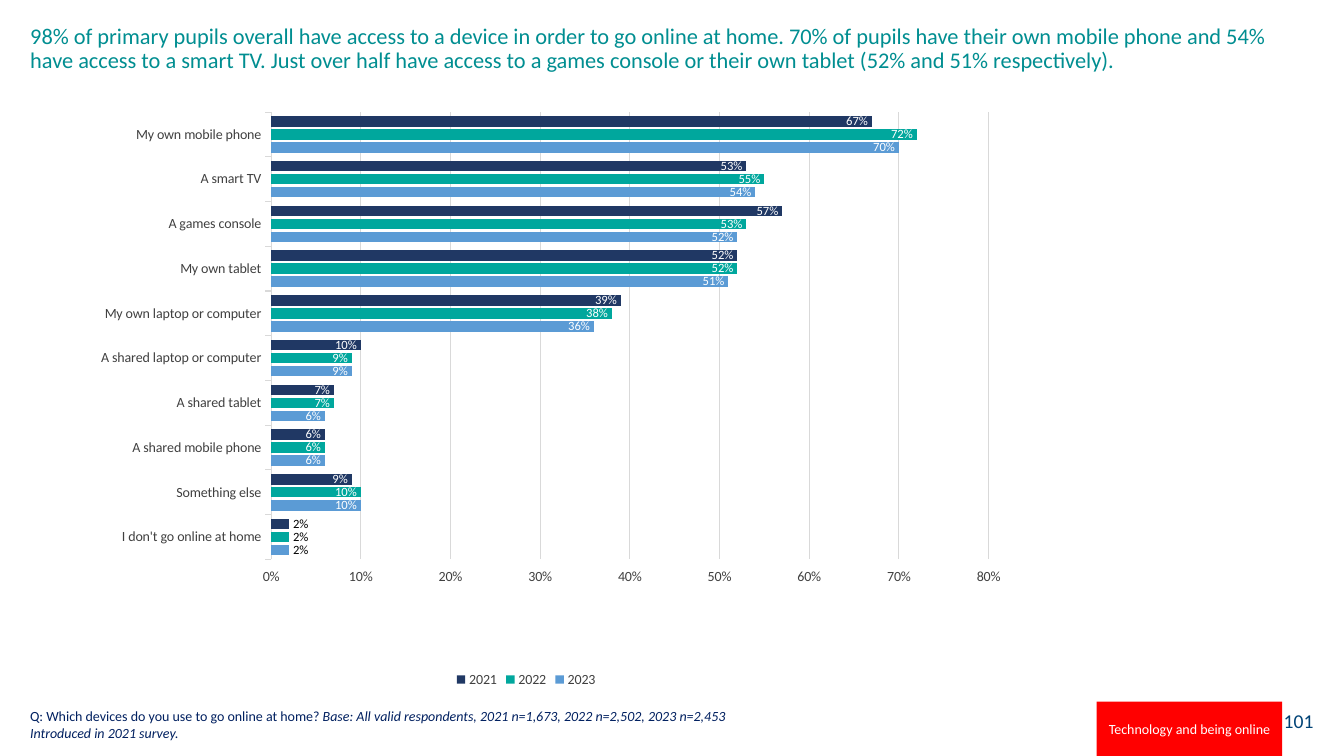
from dataclasses import dataclass

from lxml.etree import SubElement
from pptx import Presentation
from pptx.chart.data import CategoryChartData as ChartData
from pptx.dml.color import RGBColor as Color
from pptx.enum.chart import XL_CHART_TYPE as Kind
from pptx.enum.chart import XL_LABEL_POSITION as Spot
from pptx.enum.chart import XL_LEGEND_POSITION as Side
from pptx.enum.chart import XL_TICK_MARK as Tick
from pptx.enum.shapes import MSO_SHAPE as Form
from pptx.enum.text import MSO_ANCHOR as Anchor
from pptx.enum.text import PP_ALIGN as Align
from pptx.oxml.ns import qn
from pptx.util import Pt


@dataclass(frozen=True)
class Theme:
    font: str = "Calibri"
    teal: str = "008E91"
    navy: str = "002060"
    blue: str = "004376"
    red: str = "FF0000"
    white: str = "FFFFFF"
    black: str = "000000"
    gray: str = "404040"
    rule: str = "D9D9D9"
    head: float = 16
    page: float = 14
    body: float = 10
    label: float = 9


def style(font, theme, size, hue):
    font.name, font.size = theme.font, Pt(size)
    font.color.rgb = Color.from_string(hue)


def write(frame, lines, theme, size, hue, align=Align.LEFT, anchor=Anchor.TOP, space=1.0):
    frame.word_wrap = True
    frame.vertical_anchor = anchor
    for i, line in enumerate(lines):
        para = frame.add_paragraph() if i else frame.paragraphs[0]
        para.alignment, para.line_spacing = align, space
        for text, slant in line:
            run = para.add_run()
            run.text = text
            run.font.italic = slant
            style(run.font, theme, size, hue)


class Deck:
    """Holds the theme and the current slide, and draws each kind of element."""

    def __init__(self, theme):
        self.theme = theme
        self.show = Presentation()
        self.show.slide_width, self.show.slide_height = Pt(960), Pt(540)
        self.slide = self.show.slides.add_slide(self.show.slide_layouts[5])

    def title(self, text, box):
        head = self.slide.shapes.title
        head.left, head.top, head.width, head.height = map(Pt, box)
        write(head.text_frame, [[(text, False)]], self.theme,
              self.theme.head, self.theme.teal, space=0.9)

    def block(self, text, box, fill, **form):
        rect = self.slide.shapes.add_shape(Form.RECTANGLE, *map(Pt, box))
        rect.shadow.inherit = False
        rect.fill.solid()
        rect.fill.fore_color.rgb = Color.from_string(fill)
        rect.line.fill.background()
        write(rect.text_frame, [[(text, False)]], self.theme, anchor=Anchor.MIDDLE, **form)

    def note(self, lines, box):
        area = self.slide.shapes.add_textbox(*map(Pt, box))
        write(area.text_frame, lines, self.theme, self.theme.body,
              self.theme.navy, anchor=Anchor.BOTTOM)

    def bars(self, names, years, box, plot):
        theme = self.theme
        data = ChartData(number_format="0%")
        data.categories = names
        for year, hue, parts in years:
            data.add_series(year, [part / 100 for part in parts])
        chart = self.slide.shapes.add_chart(Kind.BAR_CLUSTERED, *map(Pt, box), data).chart
        style(chart.font, theme, theme.body, theme.black)
        chart.has_title = False
        chart.has_legend = True
        chart.legend.position = Side.BOTTOM
        chart.legend.include_in_layout = False
        style(chart.legend.font, theme, theme.body, theme.gray)
        self.axes(chart)
        bars = chart.plots[0]
        bars.gap_width, bars.overlap, bars.vary_by_categories = 80, -25, False
        for row, (year, hue, parts) in zip(bars.series, years):
            row.format.fill.solid()
            row.format.fill.fore_color.rgb = Color.from_string(hue)
            tags = row.data_labels
            tags.show_value, tags.position = True, Spot.INSIDE_END
            tags.number_format, tags.number_format_is_linked = "0%", False
            style(tags.font, theme, theme.label, theme.white)
            tag = row.points[0].data_label
            tag.position = Spot.OUTSIDE_END
            style(tag.font, theme, theme.label, theme.black)
        self.place(chart, plot)

    def axes(self, chart):
        theme = self.theme
        names, scale = chart.category_axis, chart.value_axis
        for axis in (names, scale):
            axis.major_tick_mark, axis.minor_tick_mark = Tick.OUTSIDE, Tick.NONE
            style(axis.tick_labels.font, theme, theme.body, theme.gray)
        scale.minimum_scale, scale.maximum_scale, scale.major_unit = 0, 0.8, 0.1
        scale.tick_labels.number_format = "0%"
        scale.tick_labels.number_format_is_linked = False
        scale.has_major_gridlines = True
        scale.format.line.fill.background()
        for line in (names.format.line, scale.major_gridlines.format.line):
            line.color.rgb = Color.from_string(theme.rule)
            line.width = Pt(0.75)

    def place(self, chart, plot):
        area = chart.plots[0]._element.getparent()
        old = area.find(qn("c:layout"))
        if old is not None:
            area.remove(old)
        frame = SubElement(area, qn("c:layout"))
        area.insert(0, frame)
        spot = SubElement(frame, qn("c:manualLayout"))
        rules = [("layoutTarget", "inner"), ("xMode", "edge"), ("yMode", "edge")]
        for key, value in rules + list(zip("xywh", plot)):
            SubElement(spot, qn(f"c:{key}")).set("val", str(value))


NAMES = ["I don't go online at home", "Something else", "A shared mobile phone",
         "A shared tablet", "A shared laptop or computer", "My own laptop or computer",
         "My own tablet", "A games console", "A smart TV", "My own mobile phone"]
YEARS = [("2023", "5B9BD5", [2, 10, 6, 6, 9, 36, 51, 52, 54, 70]),
         ("2022", "00A79D", [2, 10, 6, 7, 9, 38, 52, 53, 55, 72]),
         ("2021", "203864", [2, 9, 6, 7, 10, 39, 52, 57, 53, 67])]


def main():
    theme = Theme()
    deck = Deck(theme)
    deck.block("101", (902.9, 500.4, 42.5, 28.8), theme.white,
               size=theme.page, hue=theme.blue, align=Align.RIGHT)
    deck.title("98% of primary pupils overall have access to a device in order to go online "
               "at home. 70% of pupils have their own mobile phone and 54% have access to a "
               "smart TV. Just over half have access to a games console or their own tablet "
               "(52% and 51% respectively).", (14.4, 14.4, 916.6, 70.6))
    deck.bars(NAMES, YEARS, (14.4, 65.5, 722.9, 428.4), (0.248, 0.034, 0.709, 0.746))
    deck.note([[("Q: Which devices do you use to go online at home? ", False),
                ("Base: All valid respondents, 2021 n=1,673, 2022 n=2,502, 2023 n=2,453", True)],
               [("Introduced in 2021 survey.", True)]], (14.4, 501.1, 805.7, 31.7))
    deck.block("Technology and being online", (783.4, 501.1, 132.5, 38.9), theme.red,
               size=theme.body, hue=theme.white, align=Align.CENTER)
    deck.show.save("out.pptx")


if __name__ == "__main__":
    main()
